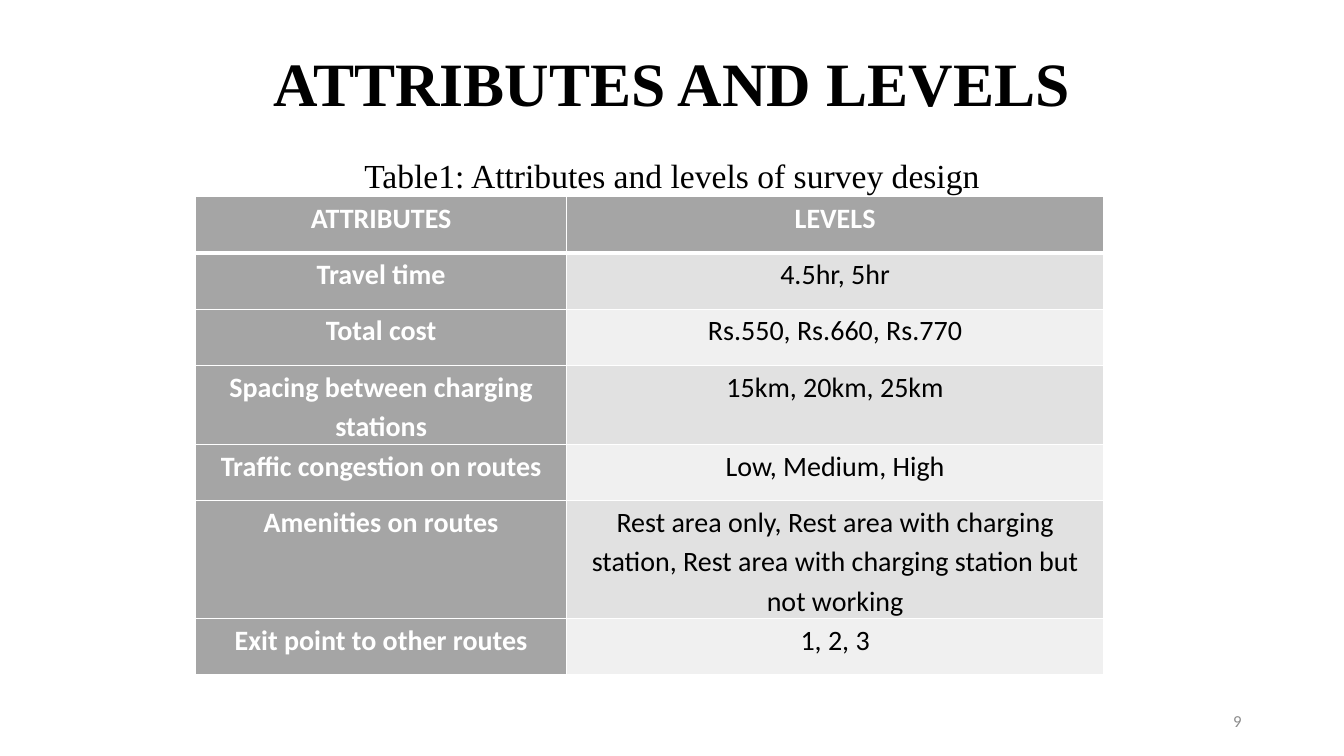
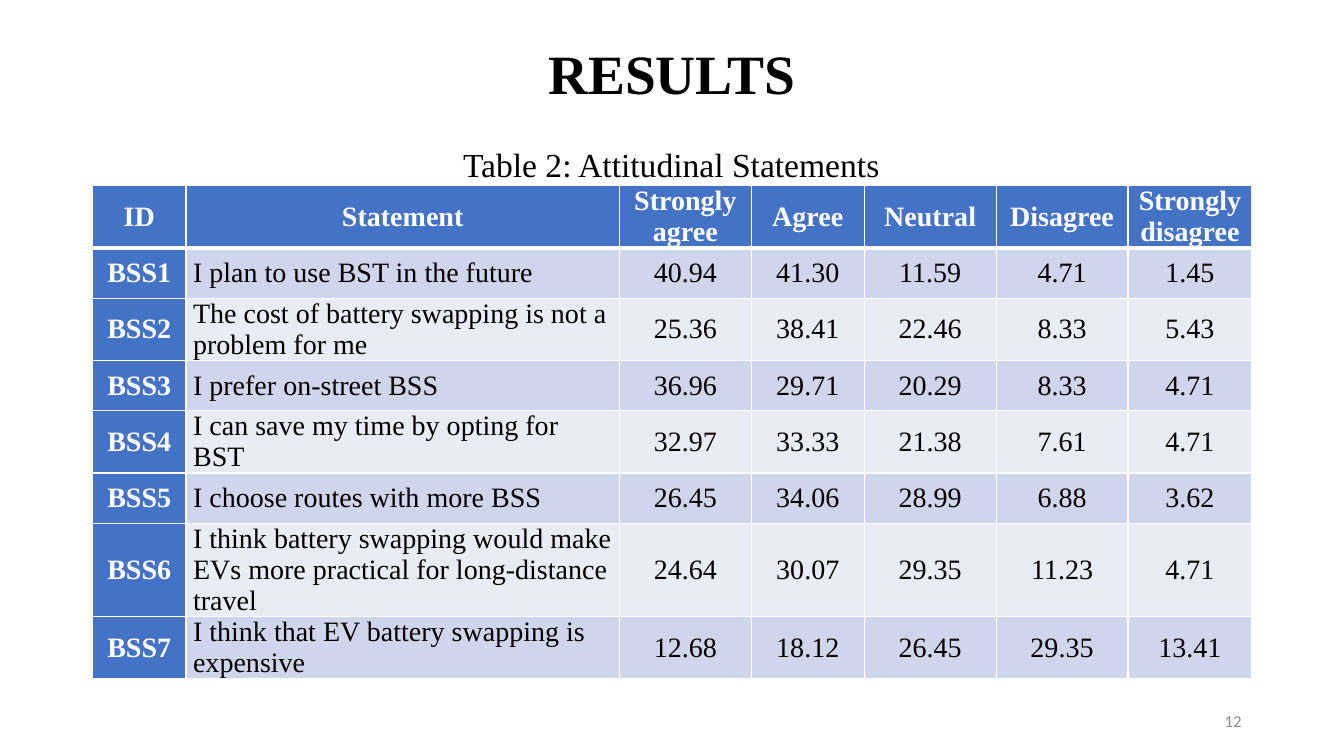
"""Build two survey slides, each with a title, a captioned table and a page number."""
from dataclasses import dataclass
from typing import Any

from lxml import etree
from pptx import Presentation
from pptx import util as u
from pptx.dml.color import RGBColor
from pptx.enum import text
from pptx.oxml import ns

SLIDE_WIDTH, SLIDE_HEIGHT = u.Inches(13.3333), u.Inches(7.5)
COLUMNS = 32
CENTER, LEFT, RIGHT = text.PP_ALIGN.CENTER, text.PP_ALIGN.LEFT, text.PP_ALIGN.RIGHT
TOP, MIDDLE, BOTTOM = text.MSO_ANCHOR.TOP, text.MSO_ANCHOR.MIDDLE, text.MSO_ANCHOR.BOTTOM


@dataclass(frozen=True)
class Theme:
    """Colours, fonts and type sizes of the deck."""

    ink: str = "000000"
    paper: str = "FFFFFF"
    muted: str = "8C8C8C"
    serif: str = "Times New Roman"
    sans: str = "Calibri"
    caption: float = 24
    cell: float = 20
    page: float = 12
    rule: float = 1
    header_rule: float = 3


THEME = Theme()


@dataclass(frozen=True)
class Box:
    """A place on the grid of square units, 32 across the slide."""

    left: float
    top: float
    width: float
    height: float

    def lengths(self) -> tuple[u.Length, ...]:
        """Return left, top, width and height as lengths."""
        return tuple(grid(n) for n in (self.left, self.top, self.width, self.height))


@dataclass(frozen=True)
class Style:
    """Look of one paragraph."""

    font: str
    size: float
    color: str
    bold: bool = False
    align: text.PP_ALIGN = CENTER
    spacing: float = 1.0


@dataclass(frozen=True)
class TableLook:
    """Colours and text layout of one table."""

    accent: str
    bands: tuple[str, str]
    font: str
    spacing: float
    anchor: text.MSO_ANCHOR
    left_columns: tuple[int, ...] = ()
    bottom_headers: tuple[int, ...] = ()


@dataclass(frozen=True)
class TablePage:
    """Content and layout of one slide."""

    title: str
    title_size: float
    title_height: float
    caption: str
    caption_box: Box
    number: str
    left: float
    top: float
    widths: tuple[float, ...]
    heights: tuple[float, ...]
    rows: tuple[tuple[str, ...], ...]
    look: TableLook


PAGES = (
    TablePage(
        title="ATTRIBUTES AND LEVELS",
        title_size=44,
        title_height=2.2,
        caption="Table1: Attributes and levels of survey design",
        caption_box=Box(5.33, 3.58, 21.34, 2.18),
        number="9",
        left=4.66,
        top=4.68,
        widths=(8.83, 12.79),
        heights=(1.34,) * 5 + (2.78, 1.34),
        rows=(
            ("ATTRIBUTES", "LEVELS"),
            ("Travel time", "4.5hr, 5hr"),
            ("Total cost", "Rs.550, Rs.660, Rs.770"),
            ("Spacing between charging stations", "15km, 20km, 25km"),
            ("Traffic congestion on routes", "Low, Medium, High"),
            ("Amenities on routes", "Rest area only, Rest area with charging station, "
             "Rest area with charging station but not working"),
            ("Exit point to other routes", "1, 2, 3"),
        ),
        look=TableLook("A5A5A5", ("E1E1E1", "F0F0F0"), THEME.sans, 1.15, TOP),
    ),
    TablePage(
        title="RESULTS",
        title_size=39.6,
        title_height=1.73,
        caption="Table 2: Attitudinal Statements",
        caption_box=Box(3.36, 3.31, 25.25, 2.18),
        number="12",
        left=2.2,
        top=4.42,
        widths=(2.23, 10.32, 3.14, 2.69, 3.14, 3.14, 2.95),
        heights=(1.2,) * 6 + (1.94, 1.2),
        rows=(
            ("ID", "Statement", "Strongly agree", "Agree", "Neutral", "Disagree",
             "Strongly disagree"),
            ("BSS1", "I plan to use BST in the future",
             "40.94", "41.30", "11.59", "4.71", "1.45"),
            ("BSS2", "The cost of battery swapping is not a problem for me",
             "25.36", "38.41", "22.46", "8.33", "5.43"),
            ("BSS3", "I prefer on-street BSS",
             "36.96", "29.71", "20.29", "8.33", "4.71"),
            ("BSS4", "I can save my time by opting for BST",
             "32.97", "33.33", "21.38", "7.61", "4.71"),
            ("BSS5", "I choose routes with more BSS",
             "26.45", "34.06", "28.99", "6.88", "3.62"),
            ("BSS6", "I think battery swapping would make EVs more practical "
             "for long-distance travel", "24.64", "30.07", "29.35", "11.23", "4.71"),
            ("BSS7", "I think that EV battery swapping is expensive",
             "12.68", "18.12", "26.45", "29.35", "13.41"),
        ),
        look=TableLook("4472C4", ("CFD5EA", "E9EBF5"), THEME.serif, 1.0, MIDDLE,
                       left_columns=(1,), bottom_headers=(2, 6)),
    ),
)


def grid(units: float) -> u.Length:
    """Turn grid units into a length."""
    return u.Emu(round(SLIDE_WIDTH * units / COLUMNS))


def assign(target: Any, values: dict[str, Any]) -> None:
    """Set each named attribute on the target."""
    for name, value in values.items():
        setattr(target, name, value)


def write(frame: Any, words: str, style: Style) -> None:
    """Fill a text frame with one styled paragraph."""
    frame.word_wrap = True
    line = frame.paragraphs[0]
    assign(line, {"alignment": style.align, "line_spacing": style.spacing,
                  "space_before": u.Pt(0)})
    run = line.add_run()
    run.text = words
    assign(run.font, {"name": style.font, "size": u.Pt(style.size), "bold": style.bold})
    run.font.color.rgb = RGBColor.from_string(style.color)


def draw_title(slide: Any, page: TablePage) -> None:
    """Place and write the title placeholder."""
    title = slide.shapes.title
    places = Box(2.2, 0.96, 27.6, page.title_height).lengths()
    assign(title, dict(zip(("left", "top", "width", "height"), places)))
    assign(title.text_frame, {"vertical_anchor": MIDDLE,
                              "auto_size": text.MSO_AUTO_SIZE.NONE})
    write(title.text_frame, page.title,
          Style(THEME.serif, page.title_size, THEME.ink, bold=True, spacing=0.9))


def draw_label(slide: Any, box: Box, words: str, style: Style,
               anchor: text.MSO_ANCHOR) -> None:
    """Add a text box with one line of text."""
    frame = slide.shapes.add_textbox(*box.lengths()).text_frame
    frame.vertical_anchor = anchor
    write(frame, words, style)


def draw_borders(cell: Any, row: int) -> None:
    """Rule a cell, with a heavier line under the header row."""
    heavy_side = {0: "lnB", 1: "lnT"}.get(row)
    properties = cell._tc.get_or_add_tcPr()
    for side in ("lnL", "lnR", "lnT", "lnB"):
        points = THEME.header_rule if side == heavy_side else THEME.rule
        line = etree.SubElement(properties, ns.qn(f"a:{side}"), w=str(u.Pt(points)))
        fill = etree.SubElement(line, ns.qn("a:solidFill"))
        etree.SubElement(fill, ns.qn("a:srgbClr"), val=THEME.paper)


def draw_cell(cell: Any, row: int, column: int, words: str, look: TableLook) -> None:
    """Rule, fill and write one table cell."""
    heading = row == 0 or column == 0
    low = row == 0 and column in look.bottom_headers
    left = row > 0 and column in look.left_columns
    draw_borders(cell, row)
    cell.fill.solid()
    cell.fill.fore_color.rgb = RGBColor.from_string(
        look.accent if heading else look.bands[(row - 1) % 2])
    assign(cell, {"margin_left": u.Inches(0.07), "margin_right": u.Inches(0.07),
                  "margin_top": 0, "margin_bottom": 0,
                  "vertical_anchor": BOTTOM if low else look.anchor})
    write(cell.text_frame, words,
          Style(look.font, THEME.cell, THEME.paper if heading else THEME.ink,
                heading, LEFT if left else CENTER, look.spacing))


def draw_table(slide: Any, page: TablePage) -> None:
    """Add the table of a page."""
    box = Box(page.left, page.top, sum(page.widths), sum(page.heights))
    table = slide.shapes.add_table(
        len(page.rows), len(page.widths), *box.lengths()).table
    table.first_col = True
    for column, width in zip(table.columns, page.widths):
        column.width = grid(width)
    for row, height in zip(table.rows, page.heights):
        row.height = grid(height)
    for i, entries in enumerate(page.rows):
        for j, words in enumerate(entries):
            draw_cell(table.cell(i, j), i, j, words, page.look)


def draw_page(deck: Any, page: TablePage) -> None:
    """Add one complete slide."""
    slide = deck.slides.add_slide(deck.slide_layouts.get_by_name("Title Only"))
    draw_title(slide, page)
    draw_table(slide, page)
    draw_label(slide, page.caption_box, page.caption,
               Style(THEME.serif, THEME.caption, THEME.ink), TOP)
    draw_label(slide, Box(22.6, 16.68, 7.2, 0.96), page.number,
               Style(THEME.sans, THEME.page, THEME.muted, align=RIGHT), MIDDLE)


def main() -> None:
    """Build and save the deck."""
    deck = Presentation()
    assign(deck, {"slide_width": SLIDE_WIDTH, "slide_height": SLIDE_HEIGHT})
    for page in PAGES:
        draw_page(deck, page)
    deck.save("out.pptx")


if __name__ == "__main__":
    main()
